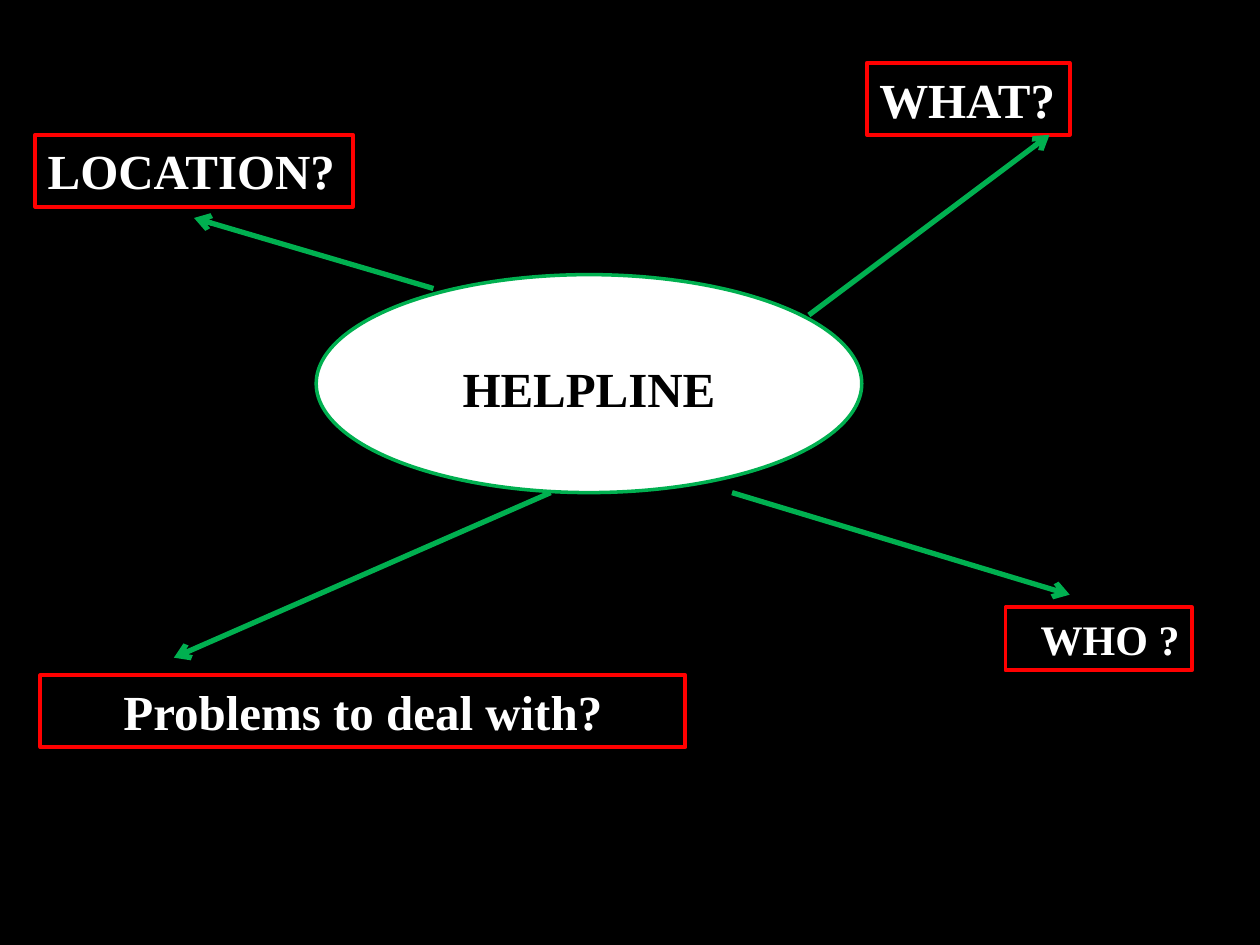
from lxml.etree import SubElement
from pptx import Presentation
from pptx.dml.color import RGBColor
from pptx.enum.shapes import MSO_CONNECTOR, MSO_SHAPE
from pptx.enum.text import MSO_ANCHOR, MSO_AUTO_SIZE, PP_ALIGN
from pptx.oxml.ns import qn
from pptx.util import Inches, Pt

BLACK = RGBColor(0x00, 0x00, 0x00)
WHITE = RGBColor(0xFF, 0xFF, 0xFF)
RED = RGBColor(0xFF, 0x00, 0x00)
GREEN = RGBColor(0x00, 0xB0, 0x50)


class MindMap:
    font = "Times New Roman"

    def __init__(self, slide):
        self.slide = slide
        slide.background.fill.solid()
        slide.background.fill.fore_color.rgb = BLACK

    def set_label(self, shape, text, size, color, align):
        shape.text_frame.text = text
        para = shape.text_frame.paragraphs[0]
        para.alignment = align
        span = para.runs[0]
        span.font.name = self.font
        span.font.size = Pt(size)
        span.font.bold = True
        span.font.color.rgb = color
        return para

    def hub(self, text, left, top, width, height):
        """Draw the central ellipse."""
        ellipse = self.slide.shapes.add_shape(
            MSO_SHAPE.OVAL, Inches(left), Inches(top), Inches(width), Inches(height))
        ellipse.shadow.inherit = False
        ellipse.fill.solid()
        ellipse.fill.fore_color.rgb = WHITE
        ellipse.line.color.rgb = GREEN
        ellipse.line.width = Pt(2)
        ellipse.text_frame.vertical_anchor = MSO_ANCHOR.MIDDLE
        para = self.set_label(ellipse, text, 28, BLACK, PP_ALIGN.CENTER)
        para.line_spacing = 1.15
        para.space_after = Pt(10)

    def question(self, text, left, top, width, height=0.57, size=28,
                 align=PP_ALIGN.LEFT, wrap=True):
        """Draw a red-framed text box."""
        box = self.slide.shapes.add_textbox(
            Inches(left), Inches(top), Inches(width), Inches(height))
        box.line.color.rgb = RED
        box.line.width = Pt(2.25)
        box.text_frame.word_wrap = wrap
        box.text_frame.auto_size = MSO_AUTO_SIZE.SHAPE_TO_FIT_TEXT
        self.set_label(box, text, size, WHITE, align)

    def arrow(self, start, end):
        connector = self.slide.shapes.add_connector(
            MSO_CONNECTOR.STRAIGHT, *map(Inches, start + end))
        connector.line.color.rgb = GREEN
        connector.line.width = Pt(3)
        line = connector._element.spPr.find(qn("a:ln"))
        SubElement(line, qn("a:tailEnd"), type="arrow")
        SubElement(connector._element.spPr, qn("a:effectLst"))


def main():
    deck = Presentation()
    deck.slide_width, deck.slide_height = Inches(10), Inches(7.5)
    page = MindMap(deck.slides.add_slide(deck.slide_layouts[6]))

    page.hub("HELPLINE", 2.51, 2.18, 4.33, 1.73)
    page.question("WHAT?", 6.88, 0.5, 1.61, wrap=False)
    page.question("WHO ?", 7.98, 4.82, 1.48, height=0.5, size=24,
                  align=PP_ALIGN.RIGHT)
    page.question("Problems to deal with?", 0.32, 5.36, 5.12, align=PP_ALIGN.CENTER)
    page.question("LOCATION?", 0.28, 1.07, 2.52)

    for start, end in (
        ((6.42, 2.5), (8.33, 1.07)),
        ((3.44, 2.29), (1.54, 1.73)),
        ((4.37, 3.91), (1.38, 5.22)),
        ((5.81, 3.91), (8.49, 4.72)),
    ):
        page.arrow(start, end)

    deck.save("out.pptx")


if __name__ == "__main__":
    main()
